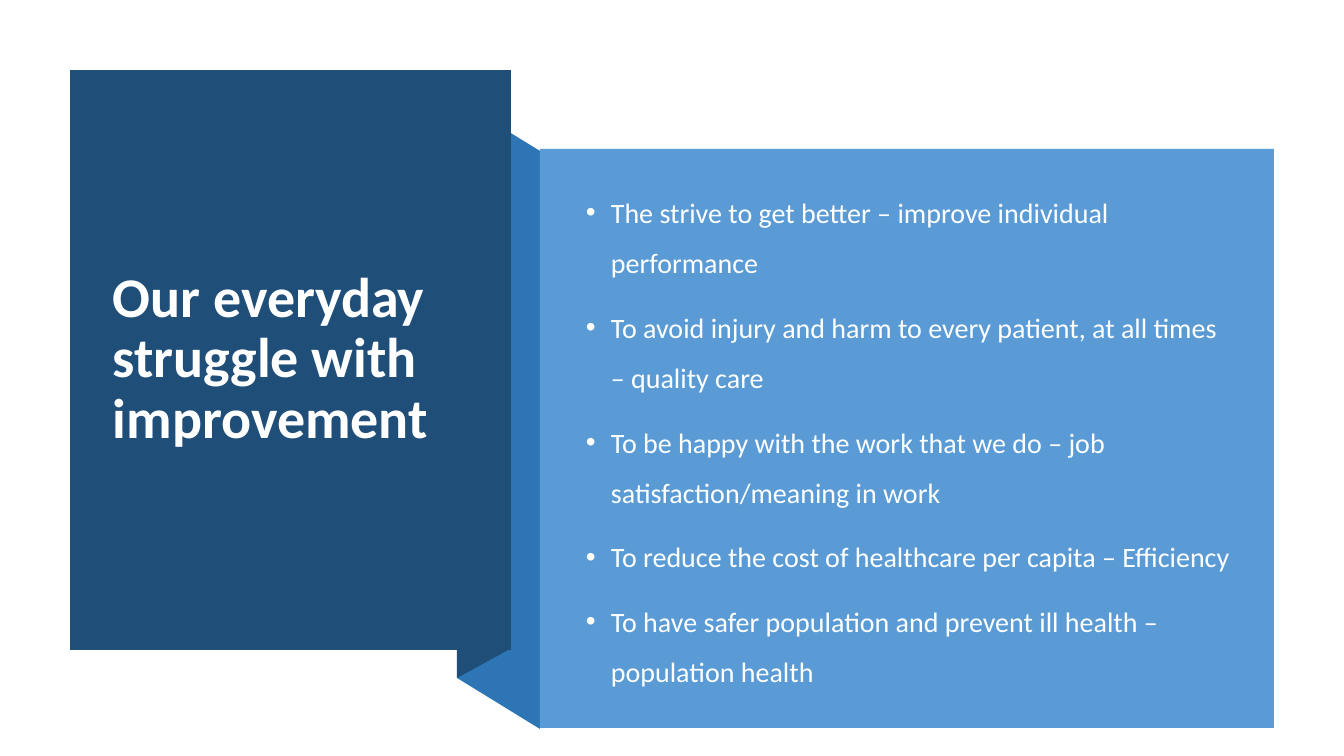
from lxml.etree import SubElement
from pptx import Presentation
from pptx.dml.color import RGBColor
from pptx.enum.shapes import MSO_SHAPE
from pptx.enum.text import MSO_ANCHOR, PP_ALIGN
from pptx.oxml.ns import qn
from pptx.util import Pt

SCALE = 914400 / 100.8
NAVY = RGBColor(0x1F, 0x4E, 0x79)
BLUE = RGBColor(0x2E, 0x75, 0xB6)
SKY = RGBColor(0x5B, 0x9B, 0xD5)
WHITE = RGBColor(0xFF, 0xFF, 0xFF)
PALE = RGBColor(0xFE, 0xFF, 0xFF)

TITLE = "Our everyday struggle with improvement"
GOALS = [
    "The strive to get better – improve individual performance",
    "To avoid injury and harm to every patient, at all times – quality care",
    "To be happy with the work that we do – job satisfaction/meaning in work",
    "To reduce the cost of healthcare per capita – Efficiency",
    "To have safer population and prevent ill health – population health",
]


def px(count):
    """Turn pixels into EMU."""
    return round(count * SCALE)


class Board:
    """Draws styled elements on one slide."""

    font = "Calibri"
    indent = 25

    def __init__(self, slide):
        self.slide = slide
        self.shapes = slide.shapes

    def paint(self, shape, color):
        """Give a shape a flat fill with no line or shadow."""
        shape.shadow.inherit = False
        shape.fill.solid()
        shape.fill.fore_color.rgb = color
        shape.line.fill.background()

    def panel(self, box, color):
        """Add a plain rectangle."""
        shape = self.shapes.add_shape(MSO_SHAPE.RECTANGLE, *map(px, box))
        self.paint(shape, color)

    def fold(self, points, color):
        """Add a closed outline through the points."""
        start, *rest = points
        form = self.shapes.build_freeform(*start, scale=SCALE)
        form.add_line_segments(rest, close=True)
        self.paint(form.convert_to_shape(), color)

    def text(self, box, lines, size, color, spacing, bold=False):
        """Add left-aligned text centred in its height."""
        frame = self.shapes.add_textbox(*map(px, box)).text_frame
        frame.word_wrap = True
        frame.vertical_anchor = MSO_ANCHOR.MIDDLE
        frame.text = "\n".join(lines)
        for para in frame.paragraphs:
            para.alignment = PP_ALIGN.LEFT
            para.line_spacing = spacing
            for run in para.runs:
                run.font.name = self.font
                run.font.size = Pt(size)
                run.font.bold = bold
                run.font.color.rgb = color
        return frame

    def bullets(self, box, lines, size, color):
        """Add a bulleted list with a hanging indent."""
        frame = self.text(box, lines, size, color, 1.5)
        for para in frame.paragraphs:
            para.space_before = Pt(10)
            props = para._p.get_or_add_pPr()
            props.set("marL", str(px(self.indent)))
            props.set("indent", str(-px(self.indent)))
            SubElement(props, qn("a:buFont"), typeface="Arial")
            SubElement(props, qn("a:buChar"), char="•")


def main():
    """Build and save the slide."""
    deck = Presentation()
    deck.slide_width, deck.slide_height = px(1344), px(756)
    board = Board(deck.slides.add_slide(deck.slide_layouts[6]))
    board.fold([(540, 729), (457, 678), (457, 100), (540, 151)], BLUE)
    board.fold([(510, 649), (457, 678), (457, 99), (510, 70)], NAVY)
    board.panel((70, 70, 441, 580), NAVY)
    board.text((103, 108, 374, 503), [TITLE], 40, WHITE, 0.9, bold=True)
    board.panel((540, 149, 734, 579), SKY)
    board.bullets((576, 149, 669, 569), GOALS, 20, PALE)
    deck.save("out.pptx")


if __name__ == "__main__":
    main()
